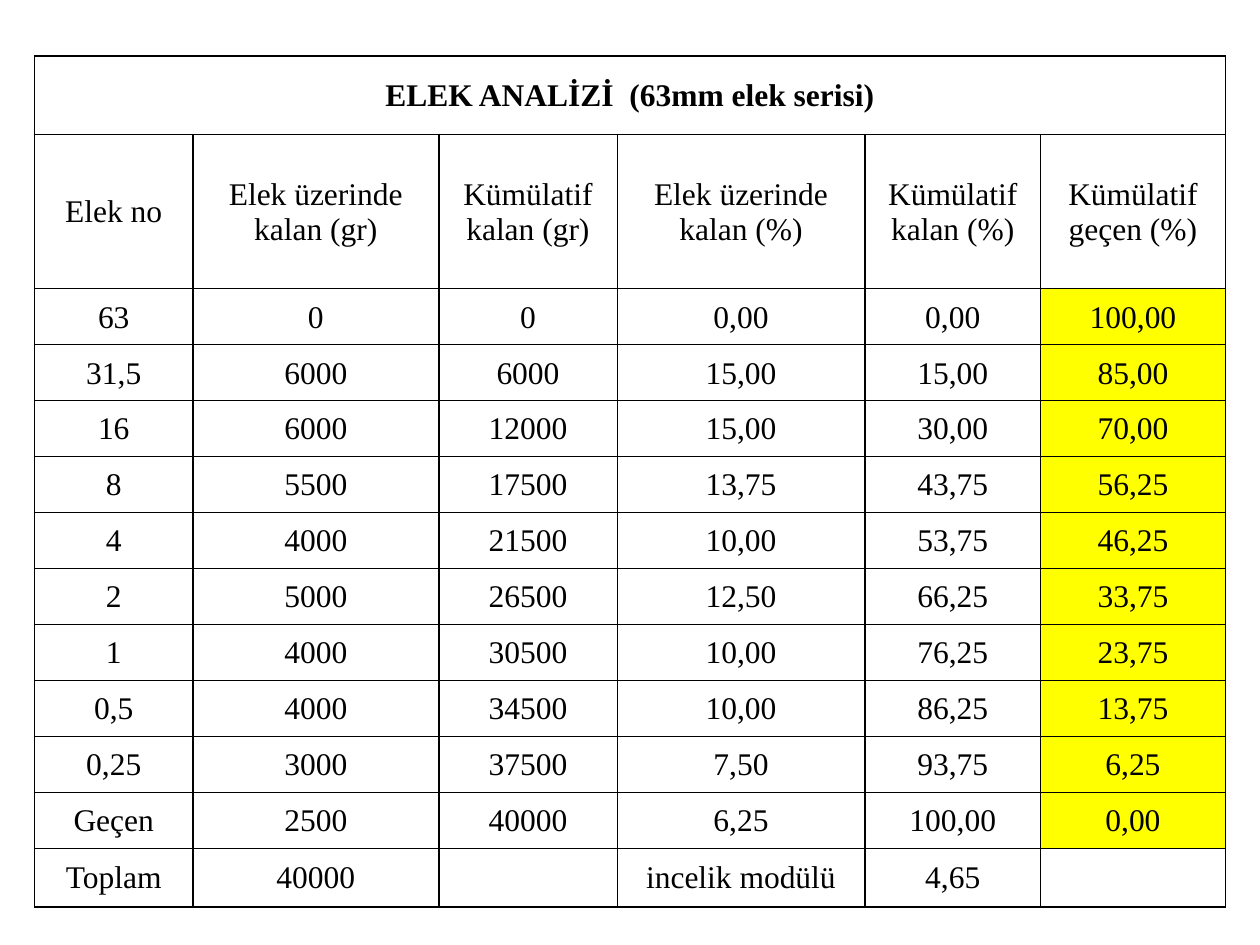
import dataclasses

import pptx
import pptx.dml.color
import pptx.enum.text
import pptx.oxml
import pptx.oxml.ns
import pptx.util

Pt = pptx.util.Pt
RGB = pptx.dml.color.RGBColor.from_string


@dataclasses.dataclass
class Theme:
    font: str = "Times New Roman"
    size: int = 18
    ink: str = "000000"
    paper: str = "FFFFFF"
    highlight: str = "FFFF00"
    border: int = 1


theme = Theme()


def write_cell(cell, text, bold=False, fill=theme.paper):
    """Write centred text in a cell with a border on all four sides."""
    cell.margin_left = cell.margin_right = cell.margin_top = Pt(0.75)
    cell.margin_bottom = Pt(0)
    cell.vertical_anchor = pptx.enum.text.MSO_ANCHOR.MIDDLE
    tcPr = cell._tc.get_or_add_tcPr()
    for side in ("lnL", "lnR", "lnT", "lnB"):
        tcPr.append(pptx.oxml.parse_xml(
            f'<a:{side} {pptx.oxml.ns.nsdecls("a")} w="{Pt(theme.border)}">'
            f'<a:solidFill><a:srgbClr val="{theme.ink}"/></a:solidFill></a:{side}>'))
    cell.fill.solid()
    cell.fill.fore_color.rgb = RGB(fill)
    p = cell.text_frame.paragraphs[0]
    p.alignment = pptx.enum.text.PP_ALIGN.CENTER
    p.font.size = Pt(theme.size)
    if text:
        r = p.add_run()
        r.text = text
        r.font.name = theme.font
        r.font.size = Pt(theme.size)
        r.font.bold = bold
        r.font.color.rgb = RGB(theme.ink)


# Slide
prs = pptx.Presentation()
prs.slide_width, prs.slide_height = Pt(720), Pt(540)
s = prs.slides.add_slide(prs.slide_layouts[6])

# Sieve analysis data
title = "ELEK ANALİZİ  (63mm elek serisi)"
header = ["Elek no", "Elek üzerinde kalan (gr)", "Kümülatif kalan (gr)",
          "Elek üzerinde kalan (%)", "Kümülatif kalan (%)", "Kümülatif geçen (%)"]
sieves = [
    ["63", "0", "0", "0,00", "0,00", "100,00"],
    ["31,5", "6000", "6000", "15,00", "15,00", "85,00"],
    ["16", "6000", "12000", "15,00", "30,00", "70,00"],
    ["8", "5500", "17500", "13,75", "43,75", "56,25"],
    ["4", "4000", "21500", "10,00", "53,75", "46,25"],
    ["2", "5000", "26500", "12,50", "66,25", "33,75"],
    ["1", "4000", "30500", "10,00", "76,25", "23,75"],
    ["0,5", "4000", "34500", "10,00", "86,25", "13,75"],
    ["0,25", "3000", "37500", "7,50", "93,75", "6,25"],
    ["Geçen", "2500", "40000", "6,25", "100,00", "0,00"],
]
total = ["Toplam", "40000", "", "incelik modülü", "4,65", ""]
rows = [[title] + [""] * 5, header, *sieves, total]

# Table grid
widths = [90.5, 140.5, 102, 141.5, 100.5, 105.5]
heights = [44.75, 88.25] + [32] * len(sieves) + [33.5]
table = s.shapes.add_table(len(rows), len(widths), Pt(19.75), Pt(32),
                           Pt(sum(widths)), Pt(sum(heights))).table
table.first_row = table.horz_banding = False
for column, width in zip(table.columns, widths):
    column.width = Pt(width)
for row, height in zip(table.rows, heights):
    row.height = Pt(height)
table.cell(0, 0).merge(table.cell(0, len(widths) - 1))

# Cells: bold title, passing percentages highlighted
for i, row in enumerate(rows):
    for j, text in enumerate(row):
        passing = row in sieves and j == len(widths) - 1
        write_cell(table.cell(i, j), text, bold=i == 0,
                   fill=theme.highlight if passing else theme.paper)

prs.save("out.pptx")
